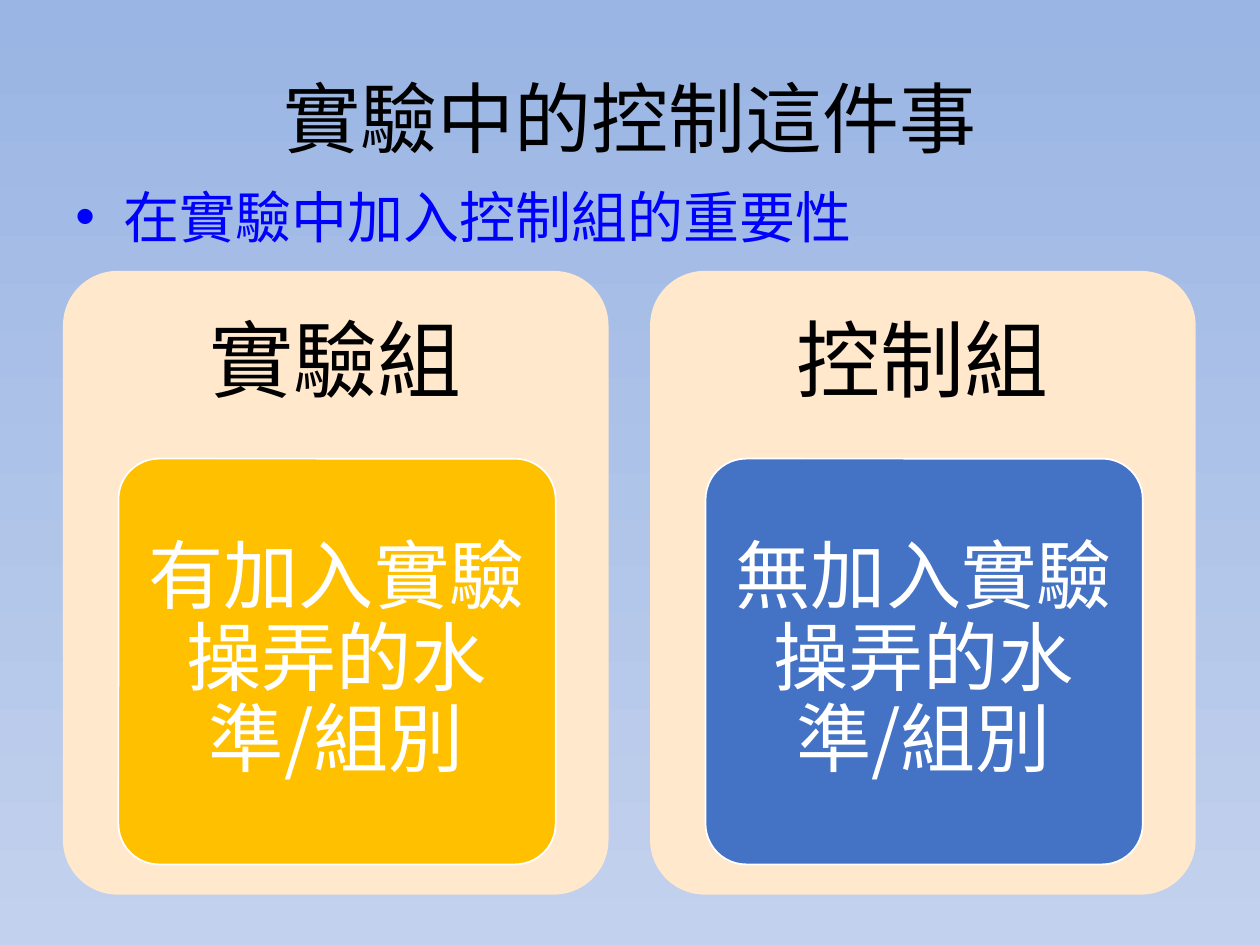
from lxml import etree
from pptx import Presentation
from pptx import util as u
from pptx.dml.color import RGBColor
from pptx.enum import shapes, text
from pptx.oxml.ns import qn

FONT = "Noto Sans CJK SC"
SKY_TOP = RGBColor(0x9A, 0xB5, 0xE4)
SKY_BOTTOM = RGBColor(0xC2, 0xD1, 0xED)
BLACK = RGBColor(0, 0, 0)
WHITE = RGBColor(255, 255, 255)
BRIGHT_BLUE = RGBColor(0, 0, 255)
CREAM = RGBColor(0xFF, 0xE8, 0xCC)
GOLD = RGBColor(0xFF, 0xC0, 0)
BLUE = RGBColor(0x44, 0x72, 0xC4)


class SlideBuilder:
    def __init__(self, deck):
        self.page = deck.slides.add_slide(deck.slide_layouts[6])

    def background(self, top, bottom):
        fill = self.page.background.fill
        fill.gradient()
        fill.gradient_angle = 270
        for stop, color, position in zip(fill.gradient_stops, (top, bottom), (0, 1)):
            stop.color.rgb = color
            stop.position = position

    def panel(self, left, top, width, height, color, outline=None):
        panel = self.page.shapes.add_shape(
            shapes.MSO_SHAPE.ROUNDED_RECTANGLE,
            *map(u.Inches, (left, top, width, height)))
        panel.adjustments[0] = 0.1
        panel.shadow.inherit = False
        panel.fill.solid()
        panel.fill.fore_color.rgb = color
        if outline is None:
            panel.line.fill.background()
        else:
            panel.line.color.rgb = outline
            panel.line.width = u.Pt(1)

    def label(self, left, top, width, height, words, size, color,
              insets=(0.1, 0.05), spacing=None, bullet=False):
        box = self.page.shapes.add_textbox(
            *map(u.Inches, (left, top, width, height)))
        frame = box.text_frame
        frame.word_wrap = True
        frame.margin_left = frame.margin_right = u.Inches(insets[0])
        frame.margin_top = frame.margin_bottom = u.Inches(insets[1])
        para = frame.paragraphs[0]
        para.text = words
        if spacing:
            para.line_spacing = spacing
        if bullet:
            frame.vertical_anchor = text.MSO_ANCHOR.TOP
            self.add_bullet(para)
        else:
            frame.vertical_anchor = text.MSO_ANCHOR.MIDDLE
            para.alignment = text.PP_ALIGN.CENTER
        para.font.size = u.Pt(size)
        para.font.color.rgb = color
        para.font.name = FONT
        defaults = para._p.pPr.find(qn("a:defRPr"))
        etree.SubElement(defaults, qn("a:ea"), typeface=FONT)

    def add_bullet(self, para):
        properties = para._p.get_or_add_pPr()
        properties.set("marL", str(u.Inches(0.38)))
        properties.set("indent", str(u.Inches(-0.38)))
        etree.SubElement(properties, qn("a:buFont"), typeface="Arial")
        etree.SubElement(properties, qn("a:buChar"), char="•")

    def group_card(self, left, heading, detail, color):
        self.panel(left, 2.15, 4.33, 4.95, CREAM)
        self.label(left, 2.15, 4.33, 1.48, heading, 48, BLACK, (0.2, 0.2), 0.9)
        self.panel(left + 0.44, 3.64, 3.47, 3.22, color, WHITE)
        self.label(left + 0.53, 3.73, 3.28, 3.03, detail, 43, WHITE, (0.12, 0.09), 0.9)


def main():
    deck = Presentation()
    deck.slide_width = u.Inches(10)
    deck.slide_height = u.Inches(7.5)
    slide = SlideBuilder(deck)
    slide.background(SKY_TOP, SKY_BOTTOM)
    slide.label(0.5, 0.3, 9, 1.25, "實驗中的控制這件事", 44, BLACK)
    cards = (
        ("實驗組", "有加入實驗操弄的水準/組別", GOLD),
        ("控制組", "無加入實驗操弄的水準/組別", BLUE),
    )
    for column, (heading, detail, color) in enumerate(cards):
        slide.group_card(0.5 + 4.66 * column, heading, detail, color)
    slide.label(0.5, 1.4, 9, 0.75, "在實驗中加入控制組的重要性", 32,
                BRIGHT_BLUE, bullet=True)
    deck.save("out.pptx")


if __name__ == "__main__":
    main()
